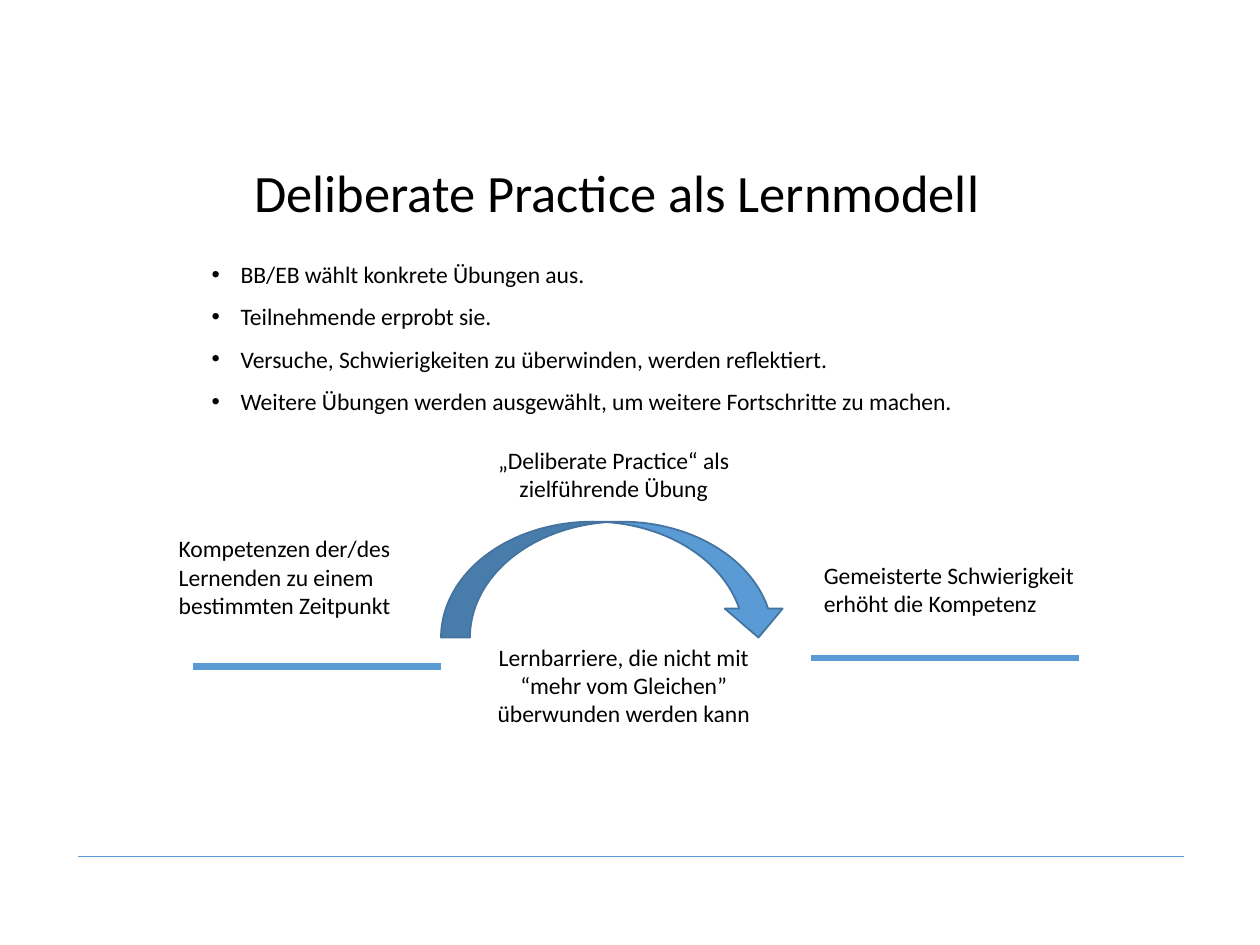
from dataclasses import dataclass

from lxml.etree import SubElement
from pptx import Presentation
from pptx.dml.color import RGBColor
from pptx.enum.shapes import MSO_CONNECTOR, MSO_SHAPE
from pptx.enum.text import MSO_ANCHOR, MSO_AUTO_SIZE, PP_ALIGN
from pptx.oxml.ns import qn
from pptx.util import Inches, Pt


@dataclass(frozen=True)
class Theme:
    """Colours, font and type sizes of the slide."""
    font: str = "Calibri"
    title_size: float = 30
    text_size: float = 13.5
    text: RGBColor = RGBColor(0x00, 0x00, 0x00)
    accent: RGBColor = RGBColor(0x5B, 0x9B, 0xD5)
    outline: RGBColor = RGBColor(0x43, 0x73, 0x9E)


def write_text(shape, theme, lines, size=None, align=PP_ALIGN.LEFT,
               anchor=MSO_ANCHOR.TOP, line_spacing=1.0, bullet_indent=None):
    """Fill a shape with one formatted paragraph per line."""
    frame = shape.text_frame
    frame.word_wrap = True
    frame.auto_size = MSO_AUTO_SIZE.NONE
    frame.vertical_anchor = anchor
    for index, line in enumerate(lines):
        paragraph = frame.add_paragraph() if index else frame.paragraphs[0]
        paragraph.text = line
        paragraph.alignment = align
        paragraph.line_spacing = line_spacing
        paragraph.space_before = Pt(0)
        if bullet_indent is not None:
            properties = paragraph._p.get_or_add_pPr()
            properties.set("marL", str(bullet_indent))
            properties.set("indent", str(-bullet_indent))
            SubElement(properties, qn("a:buFont")).set("typeface", "Arial")
            SubElement(properties, qn("a:buChar")).set("char", "•")
        for run in paragraph.runs:
            run.font.name = theme.font
            run.font.size = Pt(size or theme.text_size)
            run.font.color.rgb = theme.text


class SlideBuilder:
    """Draw styled elements on the current slide."""

    def __init__(self, slide, theme):
        """Keep the slide and its theme."""
        self.slide = slide
        self.theme = theme

    def placeholder(self, index, box, lines, **text_format):
        """Move a template placeholder and fill it."""
        shape = self.slide.placeholders[index]
        shape.left, shape.top, shape.width, shape.height = map(Inches, box)
        write_text(shape, self.theme, lines, **text_format)

    def label(self, box, text, **text_format):
        """Add a text box."""
        shape = self.slide.shapes.add_textbox(*map(Inches, box))
        write_text(shape, self.theme, [text], **text_format)

    def horizontal_line(self, left, right, top, width):
        """Add a level accent line."""
        line = self.slide.shapes.add_connector(
            MSO_CONNECTOR.STRAIGHT, Inches(left), Inches(top), Inches(right), Inches(top))
        line.line.color.rgb = self.theme.accent
        line.line.width = Pt(width)
        SubElement(line._element.spPr, qn("a:effectLst"))

    def curved_arrow(self, box):
        """Add the arrow that leaps over the barrier."""
        arrow = self.slide.shapes.add_shape(MSO_SHAPE.CURVED_DOWN_ARROW, *map(Inches, box))
        arrow.shadow.inherit = False
        arrow.fill.solid()
        arrow.fill.fore_color.rgb = self.theme.accent
        arrow.line.color.rgb = self.theme.outline
        arrow.line.width = Pt(1)


def main():
    """Build and save the slide."""
    presentation = Presentation()
    presentation.slide_width = Inches(10)
    presentation.slide_height = Inches(7.5)
    theme = Theme()
    slide = presentation.slides.add_slide(presentation.slide_layouts[1])
    builder = SlideBuilder(slide, theme)

    builder.placeholder(0, (1.92, 1.17, 7.17, 0.76), ["Deliberate Practice als Lernmodell"],
                        size=theme.title_size, anchor=MSO_ANCHOR.MIDDLE, line_spacing=0.9)
    builder.placeholder(1, (1.58, 1.9, 7.12, 1.46), [
        "BB/EB wählt konkrete Übungen aus.",
        "Teilnehmende erprobt sie.",
        "Versuche, Schwierigkeiten zu überwinden, werden reflektiert.",
        "Weitere Übungen werden ausgewählt, um weitere Fortschritte zu machen.",
    ], line_spacing=1.5, bullet_indent=Inches(0.23))

    builder.horizontal_line(0.62, 9.4, 6.8, width=0.5)
    builder.horizontal_line(1.53, 3.5, 5.29, width=3.5)
    builder.horizontal_line(6.44, 8.56, 5.22, width=3.5)
    builder.curved_arrow((3.5, 4.14, 2.75, 0.92))

    builder.label((1.32, 4.19, 2.18, 0.78),
                  "Kompetenzen der/des Lernenden zu einem bestimmten Zeitpunkt")
    builder.label((6.44, 4.4, 2.55, 0.56), "Gemeisterte Schwierigkeit\verhöht die Kompetenz")
    builder.label((3.68, 5.05, 2.54, 0.78),
                  "Lernbarriere, die nicht mit “mehr vom Gleichen” überwunden werden kann",
                  align=PP_ALIGN.CENTER)
    builder.label((3.6, 3.49, 2.54, 0.56), "„Deliberate Practice“ als zielführende Übung",
                  align=PP_ALIGN.CENTER)

    presentation.save("out.pptx")


if __name__ == "__main__":
    main()
